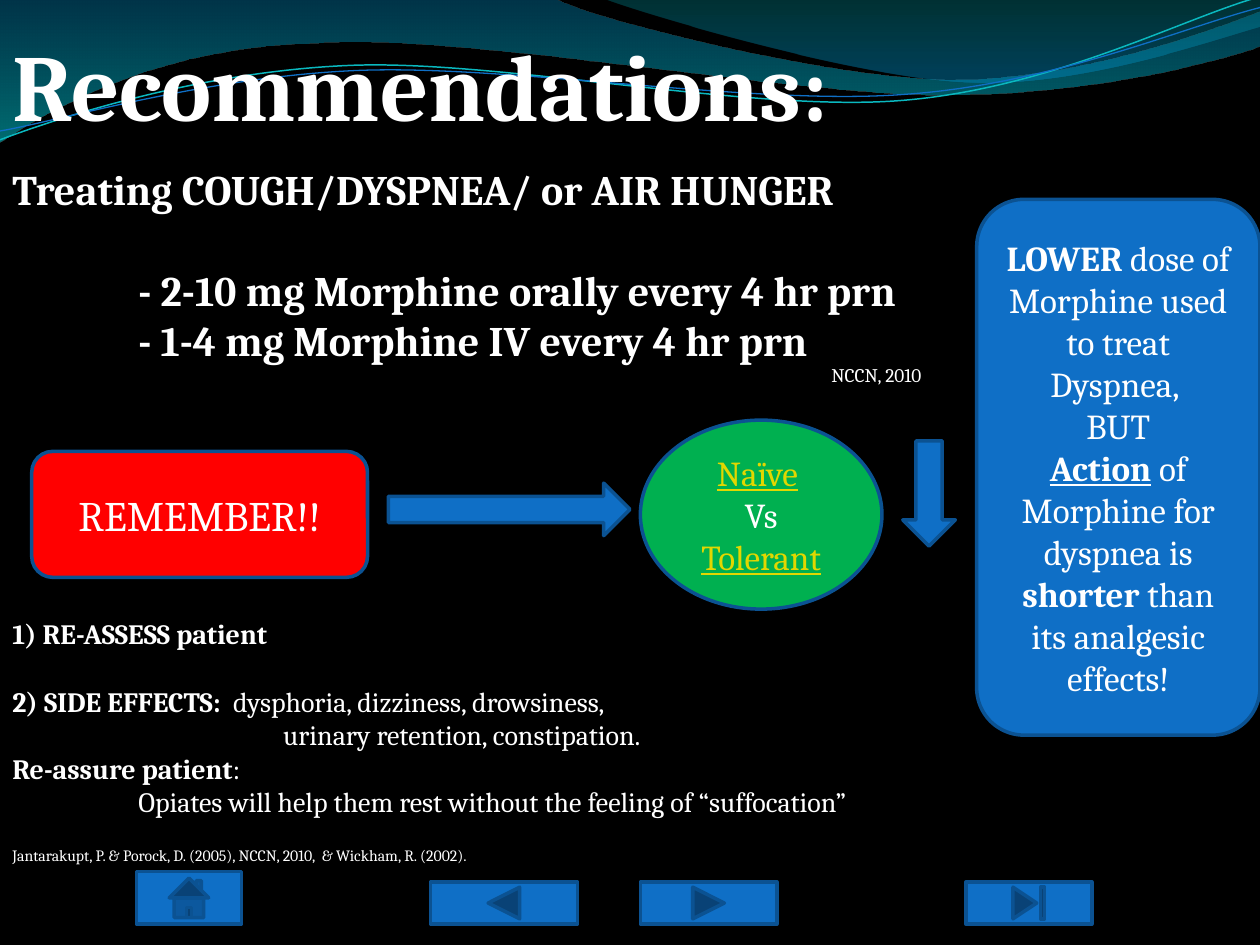
from lxml.etree import SubElement
from pptx import Presentation
from pptx.dml.color import RGBColor
from pptx.enum.shapes import MSO_SHAPE
from pptx.enum.text import MSO_ANCHOR, PP_ALIGN
from pptx.oxml.ns import qn
from pptx.util import Cm, Pt


class Theme:
    font = "Cambria"
    black, white = RGBColor(0, 0, 0), RGBColor(255, 255, 255)
    blue, edge = RGBColor.from_string("0F6FC6"), RGBColor.from_string("0B5292")
    red, green = RGBColor.from_string("FF0000"), RGBColor.from_string("00B050")
    link, aqua = RGBColor.from_string("E2D700"), RGBColor.from_string("0AB8BF")
    deep = [("0074A1", 0, 45), ("00C6CF", 1, 55)]
    dark = [("00A1A9", 0, 30), ("008BBF", 0.8, 45)]
    title, head, call, body, note, cite = 54, 24, 20, 16, 11, 9


def write(frame, rows, align):
    for n, (size, gap, dent, runs) in enumerate(rows):
        para = frame.paragraphs[0] if n == 0 else frame.add_paragraph()
        para.alignment = align
        if gap:
            para.space_before = Pt(gap)
        if dent:
            para._p.get_or_add_pPr().set("marL", str(Cm(dent)))
        for text, form in runs:
            run = para.add_run()
            run.text = text
            base = {"name": Theme.font, "size": Pt(size), "bold": False, "rgb": Theme.white}
            for key, val in {**base, **form}.items():
                setattr(run.font.color if key == "rgb" else run.font, key, val)


deck = Presentation()
deck.slide_width, deck.slide_height = Cm(25.4), Cm(19.05)
slide = deck.slides.add_slide(deck.slide_layouts[6])
slide.background.fill.solid()
slide.background.fill.fore_color.rgb = Theme.black

waves = [
    ([(0, 0), (4.4, -0.01),
      (4.76, 0.17, 6.64, 0.63, 7.58, 0.63), (8.53, 0.63, 9.58, 0.26, 10, 0.09),
      (10.01, 0.36),
      (9.83, 0.44, 8.7, 0.76, 7.46, 0.75), (6.22, 0.75, 3.82, 0.28, 2.57, 0.34),
      (1.29, 0.36, 0.46, 0.83, -0.01, 1.13), (0, 0)], Theme.deep, None, 0),
    ([(4.79, -0.01),
      (5.09, 0.11, 6.82, 0.62, 7.69, 0.65), (8.56, 0.69, 9.61, 0.32, 10, 0.21),
      (10, 0), (4.79, -0.01)], Theme.dark, None, 0),
    ([(0, 1.11),
      (0.48, 0.93, 1.58, 0.57, 2.77, 0.52), (3.95, 0.47, 5.93, 0.89, 7.13, 0.8),
      (8.33, 0.71, 9.38, 0.15, 9.98, -0.02)], None, Theme.aqua, 0.85),
    ([(0, 1.04),
      (0.47, 0.96, 1.64, 0.61, 2.83, 0.56), (4.03, 0.51, 5.97, 0.84, 7.17, 0.75),
      (8.36, 0.67, 9.41, 0.21, 10, 0.06)], None, Theme.blue, 0.75),
]
for steps, stops, ink, width in waves:
    dots = [(Cm(2.54 * x), Cm(2.54 * y))
            for step in steps for x, y in zip(step[::2], step[1::2])]
    pen = slide.shapes.build_freeform(*dots[0])
    pen.add_line_segments(dots[1:], close=bool(stops))
    wave = pen.convert_to_shape()
    wave.shadow.inherit = False
    lines = iter(list(wave.element.iter(qn("a:lnTo"))))
    for step in steps[1:]:
        line = next(lines)
        if len(step) == 6:
            line.addprevious(line.makeelement(qn("a:cubicBezTo")))
            curve = line.getprevious()
            for part in (line, next(lines), next(lines)):
                curve.append(part[0])
                part.getparent().remove(part)
    if stops:
        wave.fill.gradient()
        wave.fill.gradient_angle = 270
        for stop, (tint, place, alpha) in zip(wave.fill.gradient_stops, stops):
            stop.color.rgb = RGBColor.from_string(tint)
            stop.position = place
        for node, (tint, place, alpha) in zip(wave.element.iter(qn("a:srgbClr")), stops):
            SubElement(node, qn("a:alpha")).set("val", str(alpha * 1000))
        wave.line.fill.background()
    else:
        wave.fill.background()
        wave.line.color.rgb = ink
        wave.line.width = Pt(width)

bold = {"bold": True}
under = {"underline": True}
link = {"rgb": Theme.link, **under}
call = Theme.call
parts = [
    (MSO_SHAPE.ACTION_BUTTON_BACK_OR_PREVIOUS, (8.68, 17.78, 2.96, 0.85), Theme.blue, []),
    (MSO_SHAPE.ACTION_BUTTON_FORWARD_OR_NEXT, (12.91, 17.78, 2.75, 0.85), Theme.blue, []),
    (MSO_SHAPE.ACTION_BUTTON_END, (19.47, 17.78, 2.54, 0.85), Theme.blue, []),
    (MSO_SHAPE.ACTION_BUTTON_HOME, (2.75, 17.57, 2.12, 1.06), Theme.blue, []),
    (None, (0, 0.43, 18.19, 2.57), False,
     [(Theme.title, 0, 0, [("Recommendations:", bold)])]),
    (None, (0, 3.17, 25.04, 13.59), True, [
        (Theme.head, 0, 0, [("Treating COUGH/DYSPNEA/ or AIR HUNGER", bold)]),
        (Theme.head, 28.8, 2.54, [("- 2-10 mg Morphine orally every 4 hr prn", bold)]),
        (Theme.head, 0, 2.54, [("- 1-4 mg Morphine IV every 4 hr prn", bold)]),
        (Theme.body, 144, 0, [("1) RE-ASSESS patient", bold)]),
        (Theme.body, 19.2, 0, [("2) SIDE EFFECTS:  ", bold),
                               ("dysphoria, dizziness, drowsiness,", {})]),
        (Theme.body, 0, 5.46, [("urinary retention, constipation.", {})]),
        (Theme.body, 0, 0, [("Re-assure patient", bold), (":", {})]),
        (Theme.body, 0, 2.54,
         [("Opiates will help them rest without the feeling of “suffocation”", {})]),
    ]),
    (MSO_SHAPE.ROUNDED_RECTANGLE, (0.64, 9.1, 6.77, 2.54), Theme.red,
     [(Theme.head, 0, 0, [("REMEMBER!!", {})])]),
    (MSO_SHAPE.RIGHT_ARROW, (7.83, 9.74, 4.87, 1.06), Theme.blue, []),
    (MSO_SHAPE.OVAL, (12.91, 8.47, 4.87, 3.81), Theme.green, [
        (call, 0, 0, [("Naïve", link), (" ", {})]),
        (call, 0, 0, [("Vs", {})]),
        (call, 0, 0, [("Tolerant", link)])]),
    (MSO_SHAPE.DOWN_ARROW, (18.2, 8.89, 1.06, 2.12), Theme.blue, []),
    (MSO_SHAPE.ROUNDED_RECTANGLE, (19.69, 4.02, 5.71, 10.8), Theme.blue, [
        (call, 0, 0, [("LOWER", bold), (" dose of Morphine used to treat Dyspnea, ", {})]),
        (call, 0, 0, [("BUT", {})]),
        (call, 0, 0, [("Action", {**bold, **under}), (" of Morphine for dyspnea is ", {}),
                      ("shorter", bold), (" than its analgesic effects!", {})])]),
    (None, (0, 16.93, 10.59, 0.64), False, [(Theme.cite, 0, 0, [
        ("Jantarakupt, P. & Porock, D. (2005), NCCN, 2010,  & Wickham, R. (2002).", {})])]),
    (None, (16.51, 7.19, 2.54, 0.74), False, [(Theme.note, 0, 0, [("NCCN, 2010", {})])]),
]
for kind, spot, look, rows in parts:
    spot = [Cm(n) for n in spot]
    if kind is None:
        box = slide.shapes.add_textbox(*spot)
        box.text_frame.word_wrap = look
        write(box.text_frame, rows, PP_ALIGN.LEFT)
        continue
    shape = slide.shapes.add_shape(kind, *spot)
    shape.shadow.inherit = False
    shape.fill.solid()
    shape.fill.fore_color.rgb = look
    shape.line.color.rgb = Theme.edge
    shape.line.width = Pt(2)
    shape.text_frame.vertical_anchor = MSO_ANCHOR.MIDDLE
    write(shape.text_frame, rows, PP_ALIGN.CENTER)

deck.save("out.pptx")
